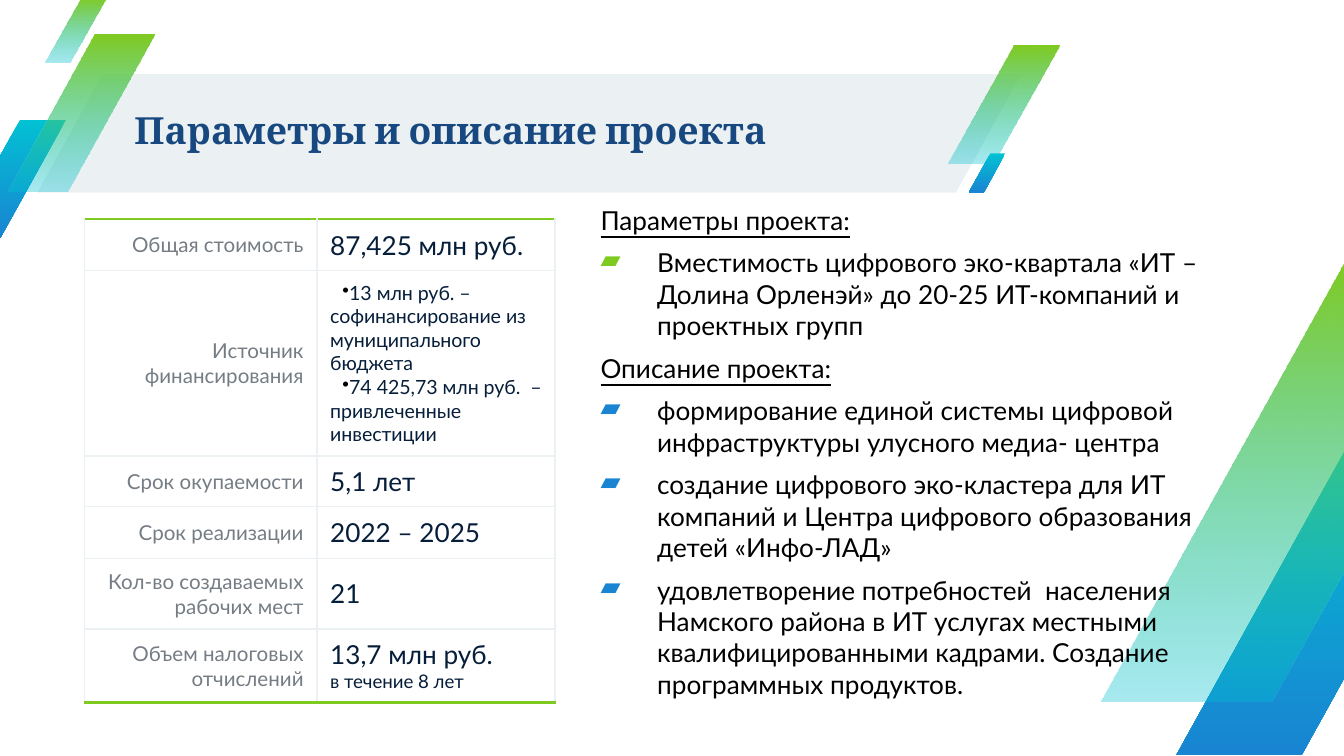
from dataclasses import dataclass

from lxml.etree import SubElement
from pptx import Presentation
from pptx.dml.color import RGBColor
from pptx.enum.shapes import MSO_SHAPE
from pptx.enum.text import MSO_ANCHOR, PP_ALIGN
from pptx.oxml import parse_xml
from pptx.oxml.ns import nsdecls, qn
from pptx.util import Cm, Pt


@dataclass(frozen=True)
class Theme:
    heading_font: str = "Cambria"
    body_font: str = "Lato"
    title: str = "184880"
    navy: str = "061E3A"
    gray: str = "757C83"
    black: str = "000000"
    pale: str = "EBF0F3"
    green: str = "7FCA20"
    cyan: str = "02C1D3"
    blue: str = "1985D2"
    title_size: float = 20
    body_size: float = 14
    label_size: float = 11
    source_size: float = 10.5
    note_size: float = 10
    thin: float = 0.75
    thick: float = 1.5


class Deck:
    def __init__(self, theme):
        self.theme = theme
        self.prs = Presentation()
        self.prs.slide_width = Cm(25.4)
        self.prs.slide_height = Cm(14.29)
        self.s = self.prs.slides.add_slide(self.prs.slide_layouts[6])

    def stripe(self, box, colors, adj=0.59, alpha=None):
        sp = self.s.shapes.add_shape(MSO_SHAPE.PARALLELOGRAM, *map(Cm, box))
        sp.shadow.inherit = False
        sp.adjustments[0] = adj
        sp.line.fill.background()
        if len(colors) == 1:
            sp.fill.solid()
            sp.fill.fore_color.rgb = RGBColor.from_string(colors[0])
            return
        sp.fill.gradient()
        sp.fill.gradient_angle = 270
        for stop, color in zip(sp.fill.gradient_stops, colors):
            stop.color.rgb = RGBColor.from_string(color)
        if alpha:
            last = sp._element.spPr.findall(".//" + qn("a:srgbClr"))[-1]
            SubElement(last, qn("a:alpha"), val=str(alpha * 1000))

    def green_stripe(self, box):
        self.stripe(box, (self.theme.green, self.theme.cyan), alpha=34)

    def blue_stripe(self, box):
        self.stripe(box, (self.theme.cyan, self.theme.blue))

    def text_box(self, box, anchor=MSO_ANCHOR.TOP):
        tf = self.s.shapes.add_textbox(*map(Cm, box)).text_frame
        tf.word_wrap = True
        tf.vertical_anchor = anchor
        tf.margin_left = tf.margin_right = tf.margin_top = tf.margin_bottom = 0
        return tf

    def paragraph(self, tf, text, size, color, font=None, bold=False, underline=False):
        p = tf.paragraphs[0]
        if p.runs:
            p = tf.add_paragraph()
        r = p.add_run()
        r.text = text
        r.font.name = font or self.theme.body_font
        r.font.size = Pt(size)
        r.font.bold = bold
        r.font.underline = underline
        r.font.color.rgb = RGBColor.from_string(color)
        return p

    def indent(self, p, left, first, bullet=None, color=None):
        pPr = p._p.get_or_add_pPr()
        pPr.set("marL", str(Cm(left)))
        pPr.set("indent", str(Cm(first)))
        if bullet:
            clr = SubElement(pPr, qn("a:buClr"))
            SubElement(clr, qn("a:srgbClr"), val=color)
            SubElement(pPr, qn("a:buChar"), char=bullet)

    def title(self, box, text):
        t = self.theme
        tf = self.text_box(box, MSO_ANCHOR.MIDDLE)
        p = self.paragraph(tf, text, t.title_size, t.title, t.heading_font, bold=True)
        p.line_spacing = 0.9

    def sections(self, box, sections):
        t = self.theme
        tf = self.text_box(box)
        for heading, color, items in sections:
            p = self.paragraph(tf, heading, t.body_size, t.black, underline=True)
            p.space_before = Pt(6)
            self.indent(p, 0.2, 0)
            for item in items:
                p = self.paragraph(tf, item, t.body_size, t.black)
                p.space_before = Pt(6)
                self.indent(p, 1.27, -1.07, "▰", color)

    def borders(self, cell, top, bottom):
        t = self.theme
        thin, accent = (t.pale, t.thin), (t.green, t.thick)
        sides = {"L": thin, "R": thin, "T": accent if top else thin,
                 "B": accent if bottom else thin}
        for i, (side, (color, width)) in enumerate(sides.items()):
            cell._tc.get_or_add_tcPr().insert(i, parse_xml(
                f'<a:ln{side} {nsdecls("a")} w="{Pt(width)}"><a:solidFill>'
                f'<a:srgbClr val="{color}"/></a:solidFill></a:ln{side}>'))

    def table(self, left, top, widths, heights, rows):
        t = self.theme
        tbl = self.s.shapes.add_table(len(rows), len(widths), Cm(left), Cm(top),
                                      Cm(sum(widths)), Cm(sum(heights))).table
        tbl.first_row = tbl.horz_banding = False
        for col, width in zip(tbl.columns, widths):
            col.width = Cm(width)
        for i, (label, values) in enumerate(rows):
            tbl.rows[i].height = Cm(heights[i])
            for cell in tbl.rows[i].cells:
                cell.fill.background()
                cell.vertical_anchor = MSO_ANCHOR.MIDDLE
                cell.margin_left = cell.margin_right = Cm(0.25)
                cell.margin_top = cell.margin_bottom = Cm(0.18)
                self.borders(cell, i == 0, i == len(rows) - 1)
            name, value = (cell.text_frame for cell in tbl.rows[i].cells)
            p = self.paragraph(name, label, t.label_size, t.gray)
            p.alignment = PP_ALIGN.RIGHT
            for text, size in values:
                p = self.paragraph(value, text, size, t.navy)
                if size == t.source_size:
                    self.indent(p, 0, 0.23, "•", t.black)


def main():
    t = Theme()
    deck = Deck(t)

    deck.stripe((0.71, 1.4, 18.59, 2.24), (t.pale,), adj=0.55)
    deck.blue_stripe((-0.86, 2.26, 2.11, 2.24))
    deck.green_stripe((17.91, 0.86, 2.11, 2.24))
    deck.green_stripe((0.15, 0.66, 2.77, 2.97))
    deck.green_stripe((0.84, -0.05, 1.17, 1.24))
    deck.blue_stripe((18.31, 2.9, 0.69, 0.74))
    deck.blue_stripe((22.23, 8.13, 5.77, 6.15))
    deck.green_stripe((20.8, 4.88, 7.87, 8.38))

    deck.title((2.54, 1.37, 16.74, 2.26), "Параметры и описание проекта")

    deck.table(1.6, 4.14, (4.39, 4.5), (0.98, 3.5, 0.96, 0.98, 1.33, 1.39), [
        ("Общая стоимость", [("87,425 млн руб.", t.body_size)]),
        ("Источник финансирования", [
            ("13 млн руб. – софинансирование из муниципального бюджета", t.source_size),
            ("74 425,73 млн руб.  – привлеченные инвестиции", t.source_size)]),
        ("Срок окупаемости", [("5,1 лет", t.body_size)]),
        ("Срок реализации", [("2022 – 2025", t.body_size)]),
        ("Кол-во создаваемых рабочих мест", [("21", t.body_size)]),
        ("Объем налоговых отчислений", [
            ("13,7 млн руб.", t.body_size), ("в течение 8 лет", t.note_size)]),
    ])

    deck.sections((11.15, 3.86, 11.81, 8.33), [
        ("Параметры проекта:", t.green, [
            "Вместимость цифрового эко-квартала «ИТ – Долина Орленэй» "
            "до 20-25 ИТ-компаний и проектных групп"]),
        ("Описание проекта:", t.blue, [
            "формирование единой системы цифровой инфраструктуры "
            "улусного медиа- центра",
            "создание цифрового эко-кластера для ИТ компаний и Центра "
            "цифрового образования детей «Инфо-ЛАД»",
            "удовлетворение потребностей  населения Намского района в ИТ услугах "
            "местными квалифицированными кадрами. Создание программных продуктов."]),
    ])

    deck.prs.save("out.pptx")


if __name__ == "__main__":
    main()
